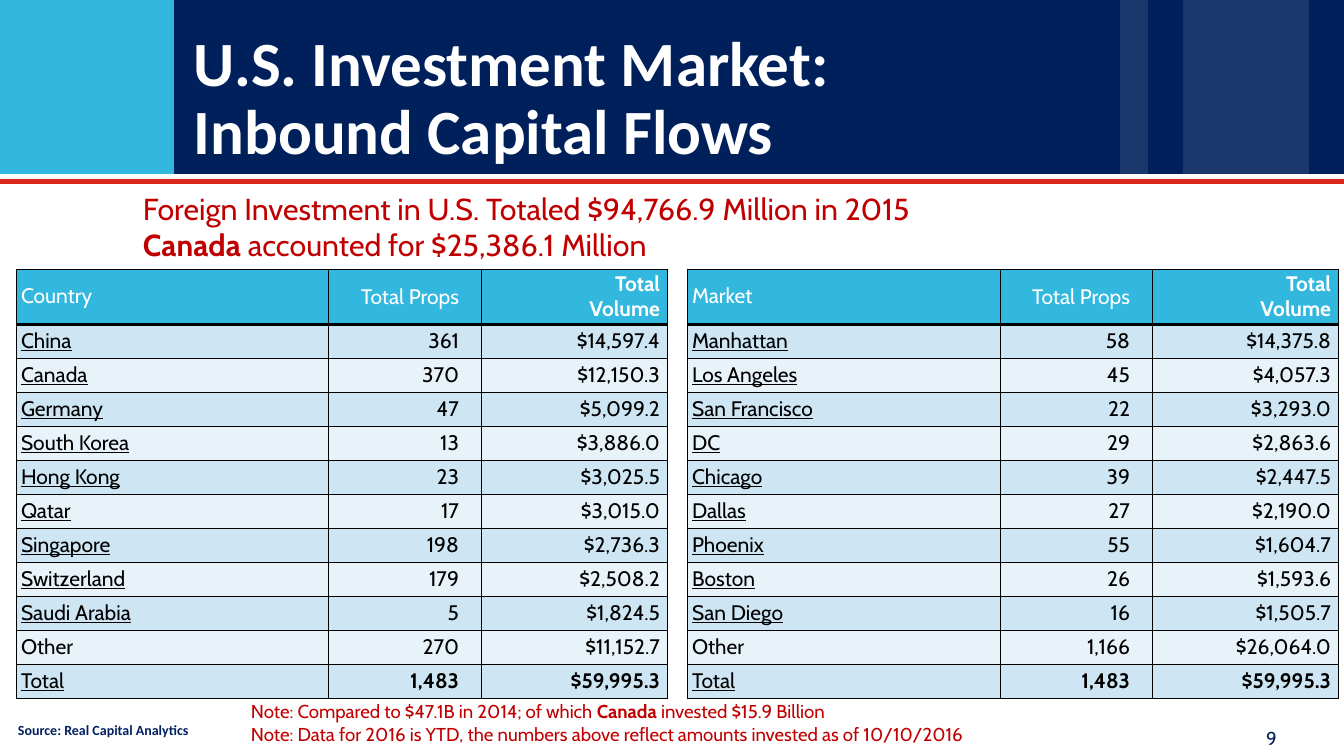
from dataclasses import dataclass

from lxml.etree import SubElement
from pptx import Presentation
from pptx.dml.color import RGBColor
from pptx.enum.shapes import MSO_SHAPE
from pptx.enum.text import MSO_ANCHOR, PP_ALIGN
from pptx.oxml.ns import qn
from pptx.slide import Slide
from pptx.table import _Cell
from pptx.util import Emu, Pt


@dataclass(frozen=True)
class Theme:
    navy: str = "00205B"
    sky: str = "32B8DF"
    red: str = "DA291C"
    note: str = "C00000"
    source: str = "002060"
    white: str = "FFFFFF"
    black: str = "000000"
    bands: tuple[str, str] = ("CEE6F3", "E8F3F9")
    body_font: str = "Cabin"
    title_font: str = "Calibri"
    title_pt: int = 54
    lead_pt: int = 26
    table_pt: int = 18
    note_pt: int = 16
    source_pt: int = 12


@dataclass(frozen=True)
class Bar:
    x: int
    y: int
    w: int
    h: int
    color: str
    alpha: int = 100


@dataclass(frozen=True)
class Column:
    width: int
    align: PP_ALIGN
    margins: tuple[int, int, int, int]  # left, top, right, bottom


@dataclass(frozen=True)
class Ranking:
    x: int
    heading: str
    rows: list[tuple[str, str, str]]


@dataclass(frozen=True)
class TextBlock:
    """Lines are lists of (text, bold) runs."""
    x: int
    y: int
    w: int
    h: int
    lines: list[list[tuple[str, bool]]]
    size: int
    color: str
    font: str
    margins: tuple[int, int] = (8, 4)  # sides, top and bottom
    anchor: MSO_ANCHOR = MSO_ANCHOR.TOP
    spacing: float = 1.0


T = Theme()
WIDTH, HEIGHT, BANNER = 1344, 756, 174
TABLE_TOP, HEADER_HEIGHT, ROW_HEIGHT = 269, 55, 34

BARS = [
    Bar(0, 0, WIDTH, BANNER, T.navy),
    Bar(0, 0, BANNER, BANNER, T.sky),
    Bar(1183, 0, 126, BANNER, T.white, 10),
    Bar(1120, 0, 28, BANNER, T.white, 10),
    Bar(0, 179, WIDTH, 5, T.red),
]
COLUMNS = [
    Column(313, PP_ALIGN.LEFT, (5, 2, 8, 3)),
    Column(153, PP_ALIGN.RIGHT, (8, 2, 23, 2)),
    Column(186, PP_ALIGN.RIGHT, (8, 2, 8, 2)),
]
RANKINGS = [
    Ranking(16, "Country", [
        ("China", "361", "$14,597.4"),
        ("Canada", "370", "$12,150.3"),
        ("Germany", "47", "$5,099.2"),
        ("South Korea", "13", "$3,886.0"),
        ("Hong Kong", "23", "$3,025.5"),
        ("Qatar", "17", "$3,015.0"),
        ("Singapore", "198", "$2,736.3"),
        ("Switzerland", "179", "$2,508.2"),
        ("Saudi Arabia", "5", "$1,824.5"),
        ("Other", "270", "$11,152.7"),
        ("Total", "1,483", "$59,995.3"),
    ]),
    Ranking(687, "Market", [
        ("Manhattan", "58", "$14,375.8"),
        ("Los Angeles", "45", "$4,057.3"),
        ("San Francisco", "22", "$3,293.0"),
        ("DC", "29", "$2,863.6"),
        ("Chicago", "39", "$2,447.5"),
        ("Dallas", "27", "$2,190.0"),
        ("Phoenix", "55", "$1,604.7"),
        ("Boston", "26", "$1,593.6"),
        ("San Diego", "16", "$1,505.7"),
        ("Other", "1,166", "$26,064.0"),
        ("Total", "1,483", "$59,995.3"),
    ]),
]
TEXTS = [
    TextBlock(135, 186, 1105, 82, [
        [("Foreign Investment in U.S. Totaled $94,766.9 Million in 2015", False)],
        [("Canada", True), (" accounted for $25,386.1 Million", False)],
    ], T.lead_pt, T.note, T.body_font),
    TextBlock(10, 718, 248, 25, [[("Source: Real Capital Analytics", True)]],
              T.source_pt, T.source, T.title_font),
    TextBlock(243, 696, 882, 54, [
        [("Note: Compared to $47.1B in 2014; of which ", False), ("Canada", True),
         (" invested $15.9 Billion", False)],
        [("Note: Data for 2016 is YTD, the numbers above reflect amounts "
          "invested as of 10/10/2016", False)],
    ], T.note_pt, T.note, T.body_font),
    TextBlock(182, 0, 1120, BANNER, [
        [("U.S. Investment Market:", True)],
        [("Inbound Capital Flows", True)],
    ], T.title_pt, T.white, T.title_font, (12, 6), MSO_ANCHOR.BOTTOM, 0.9),
    TextBlock(1258, 723, 80, 31, [[("9", False)]], T.note_pt, T.navy, T.body_font),
]


def px(n: int) -> Emu:
    return Emu(round(n * 914400 / 84))


def rgb(color: str) -> RGBColor:
    return RGBColor.from_string(color)


def draw_bar(s: Slide, bar: Bar) -> None:
    sp = s.shapes.add_shape(MSO_SHAPE.RECTANGLE, px(bar.x), px(bar.y), px(bar.w), px(bar.h))
    sp.shadow.inherit = False
    sp.line.fill.background()
    sp.fill.solid()
    sp.fill.fore_color.rgb = rgb(bar.color)
    if bar.alpha < 100:
        color = sp.fill._xPr.find(f".//{qn('a:srgbClr')}")
        SubElement(color, qn("a:alpha"), val=str(bar.alpha * 1000))


def draw_text(s: Slide, block: TextBlock) -> None:
    sp = s.shapes.add_textbox(px(block.x), px(block.y), px(block.w), px(block.h))
    tf = sp.text_frame
    tf.word_wrap = True
    tf.vertical_anchor = block.anchor
    tf.margin_left = tf.margin_right = px(block.margins[0])
    tf.margin_top = tf.margin_bottom = px(block.margins[1])
    for i, line in enumerate(block.lines):
        p = tf.add_paragraph() if i else tf.paragraphs[0]
        p.line_spacing = block.spacing
        p.font.name, p.font.size = block.font, Pt(block.size)
        p.font.color.rgb = rgb(block.color)
        for text, bold in line:
            r = p.add_run()
            r.text, r.font.bold = text, bold


def set_borders(cell: _Cell, bottom_pt: int) -> None:
    tcPr = cell._tc.get_or_add_tcPr()
    for side, width in (("L", 1), ("R", 1), ("T", 1), ("B", bottom_pt)):
        ln = SubElement(tcPr, qn(f"a:ln{side}"), w=str(Pt(width)))
        SubElement(SubElement(ln, qn("a:solidFill")), qn("a:srgbClr"), val=T.black)


def draw_ranking(s: Slide, ranking: Ranking) -> None:
    rows = [(ranking.heading, "Total Props", "Total\nVolume"), *ranking.rows]
    table = s.shapes.add_table(
        len(rows), len(COLUMNS), px(ranking.x), px(TABLE_TOP),
        px(sum(c.width for c in COLUMNS)), px(HEADER_HEIGHT + ROW_HEIGHT * len(ranking.rows)),
    ).table
    for j, column in enumerate(COLUMNS):
        table.columns[j].width = px(column.width)
    for i, row in enumerate(rows):
        header = i == 0
        table.rows[i].height = px(HEADER_HEIGHT if header else ROW_HEIGHT)
        for j, (text, column) in enumerate(zip(row, COLUMNS)):
            cell = table.cell(i, j)
            set_borders(cell, 3 if header else 1)
            cell.fill.solid()
            cell.fill.fore_color.rgb = rgb(T.sky if header else T.bands[(i - 1) % 2])
            cell.vertical_anchor = MSO_ANCHOR.MIDDLE
            (cell.margin_left, cell.margin_top,
             cell.margin_right, cell.margin_bottom) = map(px, column.margins)
            p = cell.text_frame.paragraphs[0]
            p.text, p.alignment = text, column.align
            p.font.name, p.font.size = T.body_font, Pt(T.table_pt)
            p.font.color.rgb = rgb(T.white if header else T.black)
            p.font.underline = not header and j == 0 and text != "Other"
            bold = j == 2 if header else j > 0 and row[0] == "Total"
            for r in p.runs:
                r.font.bold = bold
                r.font.color.rgb = rgb(T.white if header else T.black)


def main() -> None:
    prs = Presentation()
    prs.slide_width, prs.slide_height = px(WIDTH), px(HEIGHT)
    s = prs.slides.add_slide(prs.slide_layouts[6])
    for bar in BARS:
        draw_bar(s, bar)
    for ranking in RANKINGS:
        draw_ranking(s, ranking)
    for block in TEXTS:
        draw_text(s, block)
    prs.save("out.pptx")


if __name__ == "__main__":
    main()
